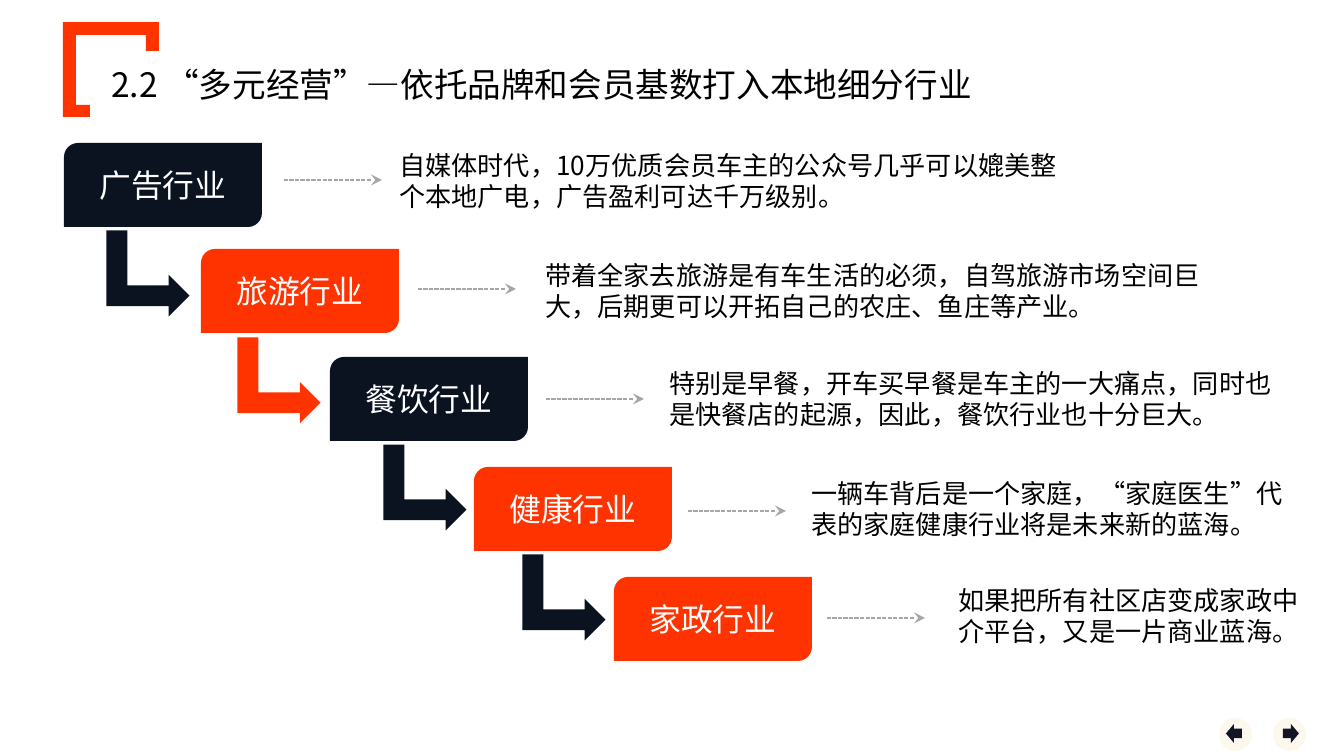
from lxml import etree
from pptx import Presentation
from pptx.dml.color import RGBColor
from pptx.enum.dml import MSO_LINE
from pptx.enum.shapes import MSO_CONNECTOR, MSO_SHAPE
from pptx.enum.text import MSO_ANCHOR, PP_ALIGN
from pptx.oxml.ns import qn
from pptx.util import Emu, Pt

SCALE = 914400 / 134.4
FONT = "Noto Sans CJK SC"
NAVY, RED, WHITE, BLACK = "0A131F", "FF3300", "FFFFFF", "000000"
GREY, CREAM, INK = "A6A6A6", "FCF8ED", "131426"
STRAIGHT = MSO_CONNECTOR.STRAIGHT
DASH = MSO_LINE.SQUARE_DOT
CARD, BEND = MSO_SHAPE.ROUND_2_DIAG_RECTANGLE, MSO_SHAPE.BENT_UP_ARROW
OVAL, BACK, NEXT = MSO_SHAPE.OVAL, MSO_SHAPE.LEFT_ARROW, MSO_SHAPE.RIGHT_ARROW
MIDDLE, TOP = MSO_ANCHOR.MIDDLE, MSO_ANCHOR.TOP
LEFT, CENTER = PP_ALIGN.LEFT, PP_ALIGN.CENTER

BRACKET = [(63, 22), (159, 22), (159, 51), (146, 51), (146, 35),
           (76, 35), (76, 105), (90, 105), (90, 117), (63, 117)]

# label, colour, card corner, arrow start, note corner, note width, note
STEPS = [
    ("广告行业", NAVY, (64, 143), (284, 180), (386, 136), 696,
     "自媒体时代，10万优质会员车主的公众号几乎可以媲美整个本地广电，广告盈利可达千万级别。"),
    ("旅游行业", RED, (201, 249), (418, 289), (532, 246), 696,
     "带着全家去旅游是有车生活的必须，自驾旅游市场空间巨大，后期更可以开拓自己的农庄、鱼庄等产业。"),
    ("餐饮行业", NAVY, (330, 357), (546, 399), (656, 354), 642,
     "特别是早餐，开车买早餐是车主的一大痛点，同时也是快餐店的起源，因此，餐饮行业也十分巨大。"),
    ("健康行业", RED, (474, 467), (688, 511), (798, 464), 519,
     "一辆车背后是一个家庭，“家庭医生”代表的家庭健康行业将是未来新的蓝海。"),
    ("家政行业", RED, (614, 577), (827, 618), (945, 571), 376,
     "如果把所有社区店变成家政中介平台，又是一片商业蓝海。"),
]
BENDS = [(105, 232, NAVY), (236, 339, RED), (382, 446, NAVY), (521, 556, NAVY)]


def px(*nums):
    return [Emu(round(n * SCALE)) for n in nums]


def rgb(code):
    return RGBColor.from_string(code)


def paint(shape, color):
    shape.shadow.inherit = False
    shape.fill.solid()
    shape.fill.fore_color.rgb = rgb(color)
    shape.line.fill.background()


def write(shape, text, size, color, align, anchor=MIDDLE, lead=None):
    frame = shape.text_frame
    frame.word_wrap = True
    frame.vertical_anchor = anchor
    para = frame.paragraphs[0]
    para.alignment = align
    if lead:
        para.line_spacing = Pt(lead)
    run = para.add_run()
    run.text = text
    run.font.size = Pt(size)
    run.font.name = FONT
    run.font.color.rgb = rgb(color)
    east = etree.SubElement(run.font._element, qn("a:ea"))
    east.set("typeface", FONT)
    return frame


def add_block(slide, kind, x, y, w, h, color):
    shape = slide.shapes.add_shape(kind, *px(x, y, w, h))
    paint(shape, color)
    return shape


def add_note(slide, x, y, w, text):
    box = slide.shapes.add_textbox(*px(x, y, w, 89))
    write(box, text, 14, BLACK, LEFT, lead=17)


def add_arrow(slide, x, y):
    line = slide.shapes.add_connector(STRAIGHT, *px(x, y, x + 98, y))
    line.line.color.rgb = rgb(GREY)
    line.line.width = Pt(0.75)
    line.line.dash_style = DASH
    tail = etree.SubElement(line.line._get_or_add_ln(), qn("a:tailEnd"))
    tail.set("type", "stealth")
    etree.SubElement(line._element.spPr, qn("a:effectLst"))


def add_bracket(slide):
    form = slide.shapes.build_freeform(*BRACKET[0], scale=SCALE)
    form.add_line_segments(BRACKET[1:], close=True)
    paint(form.convert_to_shape(), RED)


def add_title(slide, text):
    box = slide.shapes.add_textbox(*px(35, 64, 1013, 78))
    frame = write(box, text, 18, BLACK, CENTER, TOP)
    frame.margin_top = 0


def add_step(slide, label, color, card, start, note, width, text):
    shape = add_block(slide, CARD, *card, 198, 84, color)
    write(shape, label, 17, WHITE, CENTER)
    add_arrow(slide, *start)
    add_note(slide, *note, width, text)


def main():
    deck = Presentation()
    deck.slide_width, deck.slide_height = px(1344, 756)
    slide = deck.slides.add_slide(deck.slide_layouts[6])
    for x, kind, inset in ((1273, NEXT, 10), (1219, BACK, 7)):
        add_block(slide, OVAL, x, 718, 33, 33, CREAM)
        add_block(slide, kind, x + inset, 724, 16, 19, INK)
    add_bracket(slide)
    add_title(slide, "2.2 “多元经营”—依托品牌和会员基数打入本地细分行业")
    for step in STEPS:
        add_step(slide, *step)
    for x, y, color in BENDS:
        add_block(slide, BEND, x, y, 86, 83, color).rotation = 90
    deck.save("out.pptx")


if __name__ == "__main__":
    main()
